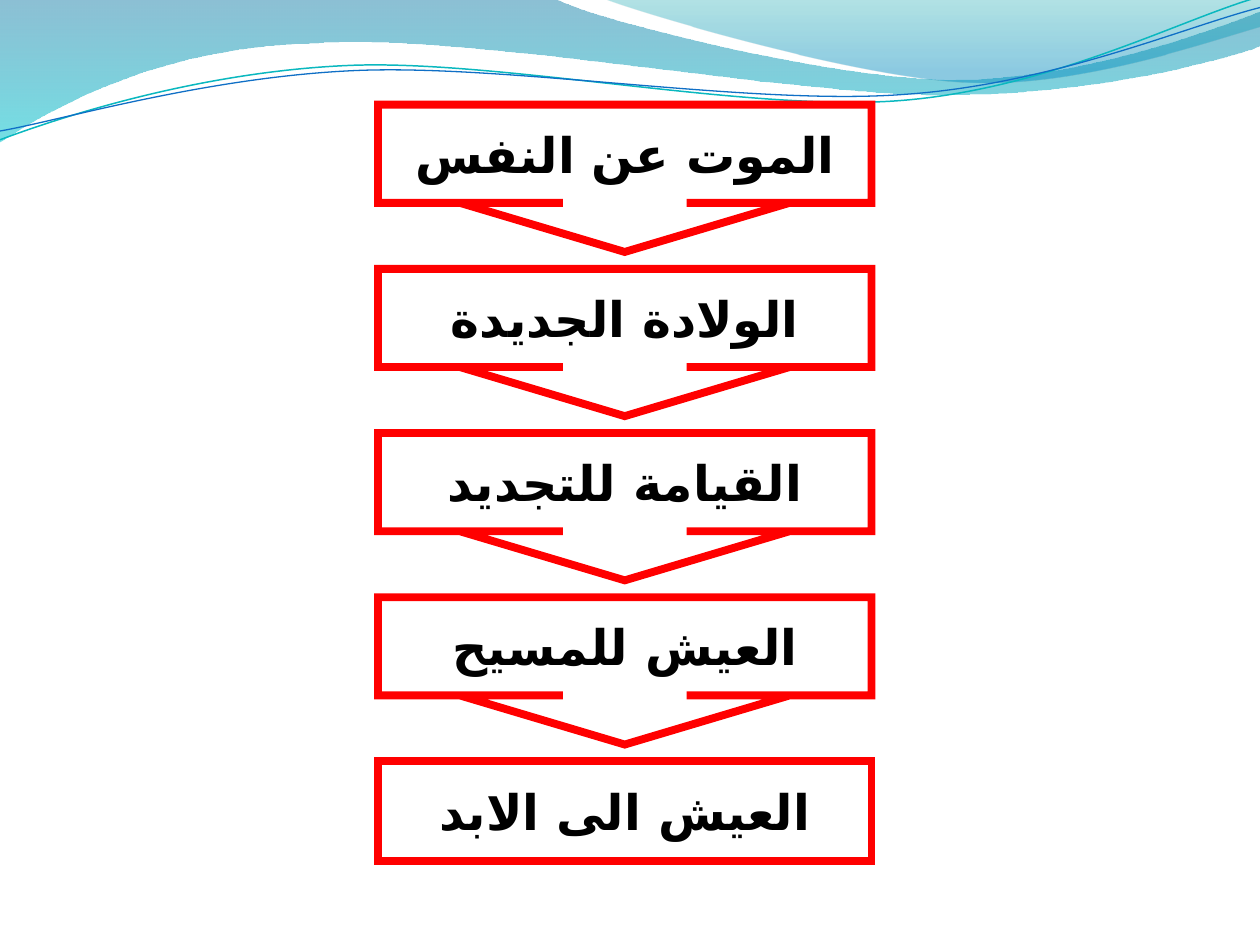
from dataclasses import dataclass
from typing import Any

from lxml import etree
from pptx import Presentation
from pptx.dml.color import RGBColor
from pptx.enum.shapes import MSO_SHAPE
from pptx.enum.text import MSO_ANCHOR, PP_ALIGN
from pptx.oxml.ns import qn
from pptx.util import Cm, Pt

CALLOUT = MSO_SHAPE.DOWN_ARROW_CALLOUT
RECTANGLE = MSO_SHAPE.RECTANGLE
MIDDLE = MSO_ANCHOR.MIDDLE
CENTER = PP_ALIGN.CENTER

COLORS = {
    "paper": "FFFFFF",
    "ink": "000000",
    "frame": "FF0000",
    "deep": "0074A1",
    "aqua": "00C6CF",
    "sea": "00A1A9",
    "sky": "008BBF",
    "teal": "0AB8BF",
    "blue": "0F6FC6",
}
CM_PER_INCH = 2.54

STEPS = [
    "الموت عن النفس",
    "الولادة الجديدة",
    "القيامة للتجديد",
    "العيش للمسيح",
    "العيش الى الابد",
]
STEP_LEFT, STEP_TOP, STEP_PITCH = 7.62, 2.11, 3.31
STEP_WIDTH, CALLOUT_HEIGHT, LAST_HEIGHT = 9.95, 2.97, 2
CALLOUT_ADJUSTMENTS = (0.839, 1.119, 0.333, 0.667)

BANDS = [
    ([(0, 0), (4.4, -0.01),
      (4.76, 0.17, 6.64, 0.63, 7.58, 0.63),
      (8.53, 0.63, 9.58, 0.26, 10, 0.09), (10.01, 0.36),
      (9.83, 0.44, 8.7, 0.76, 7.46, 0.75),
      (6.22, 0.75, 3.82, 0.28, 2.57, 0.34),
      (1.29, 0.36, 0.46, 0.83, -0.01, 1.13), (0, 0)],
     [(0, "deep", 45), (1, "aqua", 55)]),
    ([(4.79, -0.01),
      (5.09, 0.11, 6.82, 0.62, 7.69, 0.65),
      (8.56, 0.69, 9.61, 0.32, 10, 0.21), (10, 0), (4.79, -0.01)],
     [(0, "sea", 30), (0.8, "sky", 45)]),
]
WAVES = [
    ([(0, 1.11),
      (0.48, 0.93, 1.58, 0.57, 2.77, 0.52),
      (3.95, 0.47, 5.93, 0.89, 7.13, 0.8),
      (8.33, 0.71, 9.38, 0.15, 9.98, -0.02)], "teal", 0.85),
    ([(0, 1.04),
      (0.47, 0.96, 1.64, 0.61, 2.83, 0.56),
      (4.03, 0.51, 5.97, 0.84, 7.17, 0.75),
      (8.36, 0.67, 9.41, 0.21, 10, 0.06)], "blue", 0.75),
]


def color(name):
    return RGBColor.from_string(COLORS[name])


def bend(shape, segments):
    lines = iter(list(shape._element.spPr.iter(qn("a:lnTo"))))
    for segment in segments[1:]:
        line = next(lines)
        if len(segment) == 6:
            line.tag = qn("a:cubicBezTo")
            curve = etree.Element(qn("a:cubicBezTo"))
            line.addprevious(curve)
            for part in (line, next(lines), next(lines)):
                curve.append(part[0])
                part.getparent().remove(part)


@dataclass
class Painter:
    page: Any
    font: str = "Montserrat"
    arabic_font: str = "DejaVu Sans"
    size: float = 28
    frame_width: float = 4.5

    def outline(self, segments, close):
        points = [
            (Cm(segment[i] * CM_PER_INCH), Cm(segment[i + 1] * CM_PER_INCH))
            for segment in segments for i in range(0, len(segment), 2)]
        builder = self.page.shapes.build_freeform(*points[0], scale=1.0)
        builder.add_line_segments(points[1:], close=close)
        shape = builder.convert_to_shape()
        bend(shape, segments)
        shape.shadow.inherit = False
        return shape

    def band(self, segments, stops):
        shape = self.outline(segments, True)
        shape.line.fill.background()
        shape.fill.gradient()
        shape.fill.gradient_angle = 270
        for stop, (position, name, _) in zip(shape.fill.gradient_stops, stops):
            stop.position = position
            stop.color.rgb = color(name)
        tints = shape._element.spPr.iter(qn("a:srgbClr"))
        for tint, (_, _, opacity) in zip(tints, stops):
            etree.SubElement(tint, qn("a:alpha"), val=str(opacity * 1000))

    def wave(self, segments, name, width):
        shape = self.outline(segments, False)
        shape.fill.background()
        shape.line.color.rgb = color(name)
        shape.line.width = Pt(width)

    def step(self, kind, top, height, text, adjustments=()):
        box = self.page.shapes.add_shape(
            kind, Cm(STEP_LEFT), Cm(top), Cm(STEP_WIDTH), Cm(height))
        for index, value in enumerate(adjustments):
            box.adjustments[index] = value
        box.shadow.inherit = False
        box.fill.solid()
        box.fill.fore_color.rgb = color("paper")
        box.line.color.rgb = color("frame")
        box.line.width = Pt(self.frame_width)
        line = box._element.spPr.find(qn("a:ln"))
        etree.SubElement(line, qn("a:miter"), lim="800000")
        self.label(box.text_frame, text)

    def label(self, frame, text):
        frame.word_wrap = False
        frame.vertical_anchor = MIDDLE
        para = frame.paragraphs[0]
        para.alignment = CENTER
        para._p.get_or_add_pPr().set("rtl", "1")
        span = para.add_run()
        span.text = text
        span.font.name = self.font
        span.font.size = Pt(self.size)
        span.font.bold = True
        span.font.color.rgb = color("ink")
        etree.SubElement(span._r.rPr, qn("a:cs"), typeface=self.arabic_font)


def main():
    deck = Presentation()
    deck.slide_width, deck.slide_height = Cm(25.4), Cm(19.05)
    painter = Painter(deck.slides.add_slide(deck.slide_layouts[6]))
    for segments, stops in BANDS:
        painter.band(segments, stops)
    for segments, name, width in WAVES:
        painter.wave(segments, name, width)
    for index, text in enumerate(STEPS):
        top = STEP_TOP + index * STEP_PITCH
        if index < len(STEPS) - 1:
            painter.step(CALLOUT, top, CALLOUT_HEIGHT, text, CALLOUT_ADJUSTMENTS)
        else:
            painter.step(RECTANGLE, top, LAST_HEIGHT, text)
    deck.save("out.pptx")


if __name__ == "__main__":
    main()
